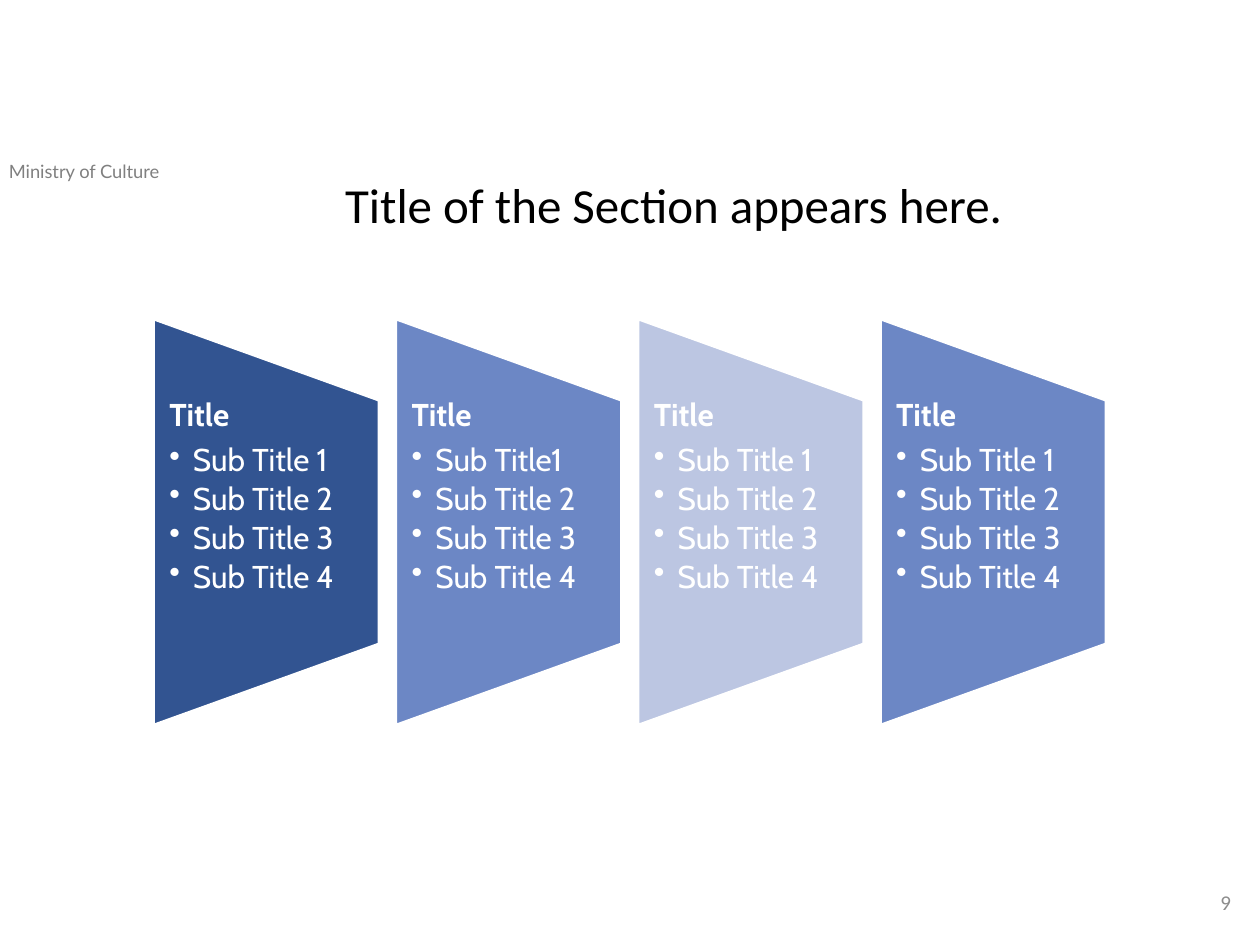
import pptx
import pptx.util
import pptx.dml.color
import pptx.enum.shapes
import pptx.enum.text
import pptx.oxml.ns
from lxml import etree

Pt = pptx.util.Pt
ALIGN = pptx.enum.text.PP_ALIGN
ANCHOR = pptx.enum.text.MSO_ANCHOR
COLORS = {
    "navy": "325491", "blue": "6C87C5", "pale": "BCC6E2", "white": "FFFFFF",
    "ministry": "808080", "number": "8C8C8C", "title": "000000",
}


def color(name):
    return pptx.dml.color.RGBColor.from_string(COLORS[name])


def write(paragraph, text, *, size, font, tint, bold=False, align=ALIGN.LEFT,
          line=1.0, after=0, bullet_indent=0):
    paragraph.alignment = align
    paragraph.line_spacing = line
    paragraph.space_before = Pt(0)
    paragraph.space_after = Pt(after)
    if bullet_indent:
        paragraph.level = 1
        properties = paragraph._p.get_or_add_pPr()
        properties.set("marL", str(Pt(bullet_indent)))
        properties.set("indent", str(-Pt(bullet_indent)))
        bullet = etree.SubElement(properties, pptx.oxml.ns.qn("a:buChar"))
        bullet.set("char", "•")
    run = paragraph.add_run()
    run.text = text
    run.font.size = Pt(size)
    run.font.name = font
    run.font.bold = bold
    run.font.color.rgb = color(tint)


presentation = pptx.Presentation()
presentation.slide_width, presentation.slide_height = Pt(720), Pt(540)
slide = presentation.slides.add_slide(presentation.slide_layouts[5])

# Section title
section = slide.shapes.title
section.left, section.top, section.width, section.height = Pt(190), Pt(100), Pt(408), Pt(57)
section.text_frame.auto_size = pptx.enum.text.MSO_AUTO_SIZE.NONE
section.text_frame.vertical_anchor = ANCHOR.TOP
write(section.text_frame.paragraphs[0], "Title of the Section appears here.",
      size=28, font="Calibri", tint="title", line=0.9)

# Ministry name and page number
ministry = slide.shapes.add_textbox(Pt(-2), Pt(88), Pt(157), Pt(20)).text_frame
ministry.word_wrap = True
write(ministry.paragraphs[0], "Ministry of Culture", size=10.5, font="Lato", tint="ministry")

number = slide.shapes.add_textbox(Pt(548.5), Pt(501), Pt(162), Pt(29)).text_frame
number.word_wrap = True
number.vertical_anchor = ANCHOR.MIDDLE
write(number.paragraphs[0], "9", size=12, font="Calibri", tint="number", align=ALIGN.RIGHT)

# Four panels: trapezoids turned on their side, each with a heading and a list
PANEL_LEFT, PANEL_STEP, PANEL_MIDDLE = 87.8, 138.45, 298.3
PANEL_WIDTH, PANEL_HEIGHT = 128.8, 232
LIST_TOP, LIST_HEIGHT = 228.3, 139.5

panels = [
    ("navy", "Sub Title 1"),
    ("blue", "Sub Title1"),
    ("pale", "Sub Title 1"),
    ("blue", "Sub Title 1"),
]
for index, (fill, first_item) in enumerate(panels):
    left = PANEL_LEFT + index * PANEL_STEP
    panel = slide.shapes.add_shape(
        pptx.enum.shapes.MSO_SHAPE.FLOWCHART_MANUAL_OPERATION,
        Pt(left + (PANEL_WIDTH - PANEL_HEIGHT) / 2), Pt(PANEL_MIDDLE - PANEL_WIDTH / 2),
        Pt(PANEL_HEIGHT), Pt(PANEL_WIDTH))
    panel.rotation = 270
    panel.shadow.inherit = False
    panel.fill.solid()
    panel.fill.fore_color.rgb = color(fill)
    panel.line.color.rgb = color("white")
    panel.line.width = Pt(1.5)

    content = slide.shapes.add_textbox(
        Pt(left), Pt(LIST_TOP), Pt(PANEL_WIDTH), Pt(LIST_HEIGHT)).text_frame
    content.word_wrap = True
    content.margin_left = content.margin_right = Pt(9)
    content.margin_top = content.margin_bottom = 0
    write(content.paragraphs[0], "Title", size=18, font="Cabin", tint="white",
          bold=True, line=0.9, after=6.3)
    for item in (first_item, "Sub Title 2", "Sub Title 3", "Sub Title 4"):
        write(content.add_paragraph(), item, size=18, font="Cabin", tint="white",
              line=0.9, after=2.7, bullet_indent=13.5)

presentation.save("out.pptx")
